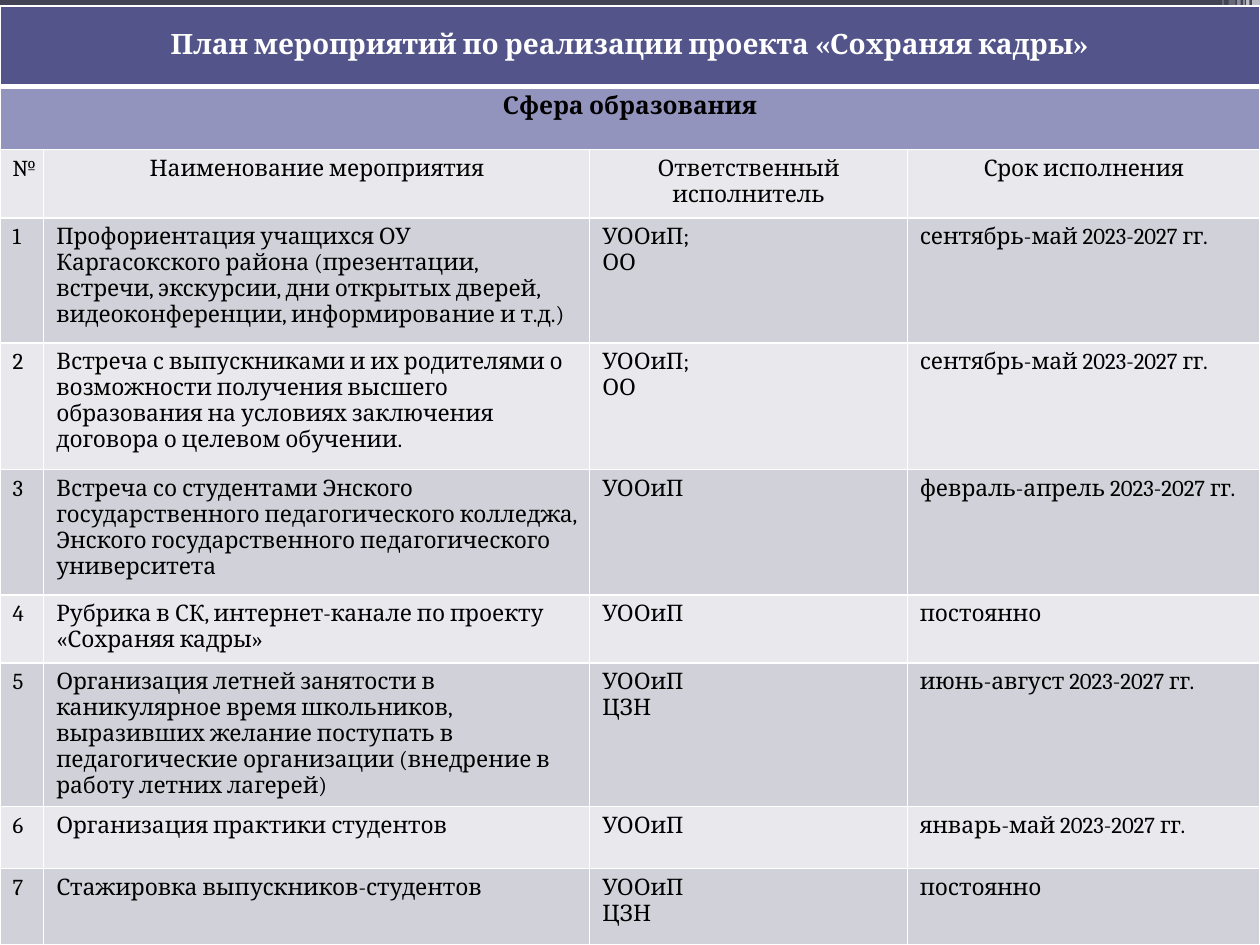
"""Builds the slide with the action plan table for the education sector."""
from lxml.etree import SubElement
from pptx import Presentation
from pptx.dml.color import RGBColor
from pptx.enum.shapes import MSO_SHAPE
from pptx.enum.text import PP_ALIGN
from pptx.oxml.ns import qn
from pptx.util import Pt

COLORS = {
    "band": "424456",
    "heading": "53548A",
    "section": "9394BE",
    "light": "E9E9ED",
    "dark": "D1D1DA",
    "white": "FFFFFF",
    "black": "000000",
}
FORMATS = {
    "heading": {"size": Pt(16), "bold": True},
    "section": {"size": Pt(14), "bold": True},
    "body": {"size": Pt(13), "bold": False},
}
STRIPES = [
    (715.5, 4.5, 49, 65),
    (712, 2, 49, 65),
    (710.5, 0.75, 49, 60),
    (707, 2, 49, 40),
    (702, 4, 46, 20),
    (698.5, 0.75, 46, 30),
]
COLUMN_WIDTHS = [25, 312, 181.5, 201.5]
ROW_HEIGHTS = [46, 36, 39, 71.5, 72.5, 71.5, 39, 82, 35.5, 43.5]
HEADINGS = ["№", "Наименование мероприятия", "Ответственный исполнитель", "Срок исполнения"]
ACTIONS = [
    ("Профориентация учащихся ОУ Каргасокского района (презентации, встречи, экскурсии, "
     "дни открытых дверей, видеоконференции, информирование и т.д.)",
     "УООиП;\nОО", "сентябрь-май 2023-2027 гг."),
    ("Встреча с выпускниками и их родителями о возможности получения высшего образования "
     "на условиях заключения договора о целевом обучении.",
     "УООиП;\nОО", "сентябрь-май 2023-2027 гг."),
    ("Встреча со студентами Энского государственного педагогического колледжа, "
     "Энского государственного педагогического университета",
     "УООиП", "февраль-апрель 2023-2027 гг."),
    ("Рубрика в СК, интернет-канале по проекту «Сохраняя кадры»", "УООиП", "постоянно"),
    ("Организация летней занятости в каникулярное время школьников, выразивших желание "
     "поступать в педагогические организации (внедрение в работу летних лагерей)",
     "УООиП\nЦЗН", "июнь-август 2023-2027 гг."),
    ("Организация практики студентов", "УООиП", "январь-май 2023-2027 гг."),
    ("Стажировка выпускников-студентов", "УООиП\nЦЗН", "постоянно"),
]


class PlanPage:
    """Holds the style and the current slide."""

    def __init__(self, deck, font="Cambria"):
        self.page = deck.slides.add_slide(deck.slide_layouts[6])
        self.font = font

    def bar(self, left, top, width, height, color, opacity=100):
        """Add a plain rectangle."""
        shape = self.page.shapes.add_shape(
            MSO_SHAPE.RECTANGLE, Pt(left), Pt(top), Pt(width), Pt(height))
        shape.shadow.inherit = False
        shape.line.fill.background()
        shape.fill.solid()
        shape.fill.fore_color.rgb = RGBColor.from_string(COLORS[color])
        if opacity < 100:
            tint = shape.fill._xPr.find(".//" + qn("a:srgbClr"))
            SubElement(tint, qn("a:alpha"), val=str(opacity * 1000))

    def table(self, left, top, widths, heights):
        """Add an empty table with the given column and row sizes."""
        table = self.page.shapes.add_table(
            len(heights), len(widths), Pt(left), Pt(top),
            Pt(sum(widths)), Pt(sum(heights))).table
        for column, width in zip(table.columns, widths):
            column.width = Pt(width)
        for row, height in zip(table.rows, heights):
            row.height = Pt(height)
        return table

    def borders(self, cell, bottom=1):
        """Draw white cell borders, the bottom one with its own width."""
        properties = cell._tc.get_or_add_tcPr()
        for position, side in enumerate(("lnL", "lnR", "lnT", "lnB")):
            width = bottom if side == "lnB" else 1
            line = properties.makeelement(qn("a:" + side), {"w": str(Pt(width))})
            fill = SubElement(line, qn("a:solidFill"))
            SubElement(fill, qn("a:srgbClr"), val=COLORS["white"])
            properties.insert(position, line)

    def cell(self, cell, text, fill, style="body", color="black", align=PP_ALIGN.LEFT):
        """Write and format one table cell."""
        cell.text = text
        cell.fill.solid()
        cell.fill.fore_color.rgb = RGBColor.from_string(COLORS[fill])
        for para in cell.text_frame.paragraphs:
            para.alignment = align
            for span in para.runs:
                span.font.name = self.font
                span.font.color.rgb = RGBColor.from_string(COLORS[color])
                for name, value in FORMATS[style].items():
                    setattr(span.font, name, value)


def main():
    """Build and save the deck."""
    deck = Presentation()
    deck.slide_width, deck.slide_height = Pt(720), Pt(540)
    plan = PlanPage(deck)
    plan.bar(0, 0, 720, 24.5, "band")
    for left, width, height, opacity in STRIPES:
        plan.bar(left, 0, width, height, "white", opacity)

    table = plan.table(0, 3.5, COLUMN_WIDTHS, ROW_HEIGHTS)
    for row in range(len(ROW_HEIGHTS)):
        for column in range(len(COLUMN_WIDTHS)):
            plan.borders(table.cell(row, column), bottom=3 if row == 0 else 1)
    for row in range(2):
        table.cell(row, 0).merge(table.cell(row, len(COLUMN_WIDTHS) - 1))

    heading = table.cell(0, 0)
    plan.cell(heading, "План мероприятий по реализации проекта «Сохраняя кадры»",
              "heading", "heading", "white", PP_ALIGN.CENTER)
    heading.margin_top = Pt(13)
    plan.cell(table.cell(1, 0), "Сфера образования", "section", "section",
              align=PP_ALIGN.CENTER)
    for column, text in enumerate(HEADINGS):
        plan.cell(table.cell(2, column), text, "light", align=PP_ALIGN.CENTER)
    for number, action in enumerate(ACTIONS, 1):
        fill = "dark" if number % 2 else "light"
        for column, text in enumerate((str(number), *action)):
            plan.cell(table.cell(number + 2, column), text, fill)

    deck.save("out.pptx")


if __name__ == "__main__":
    main()
